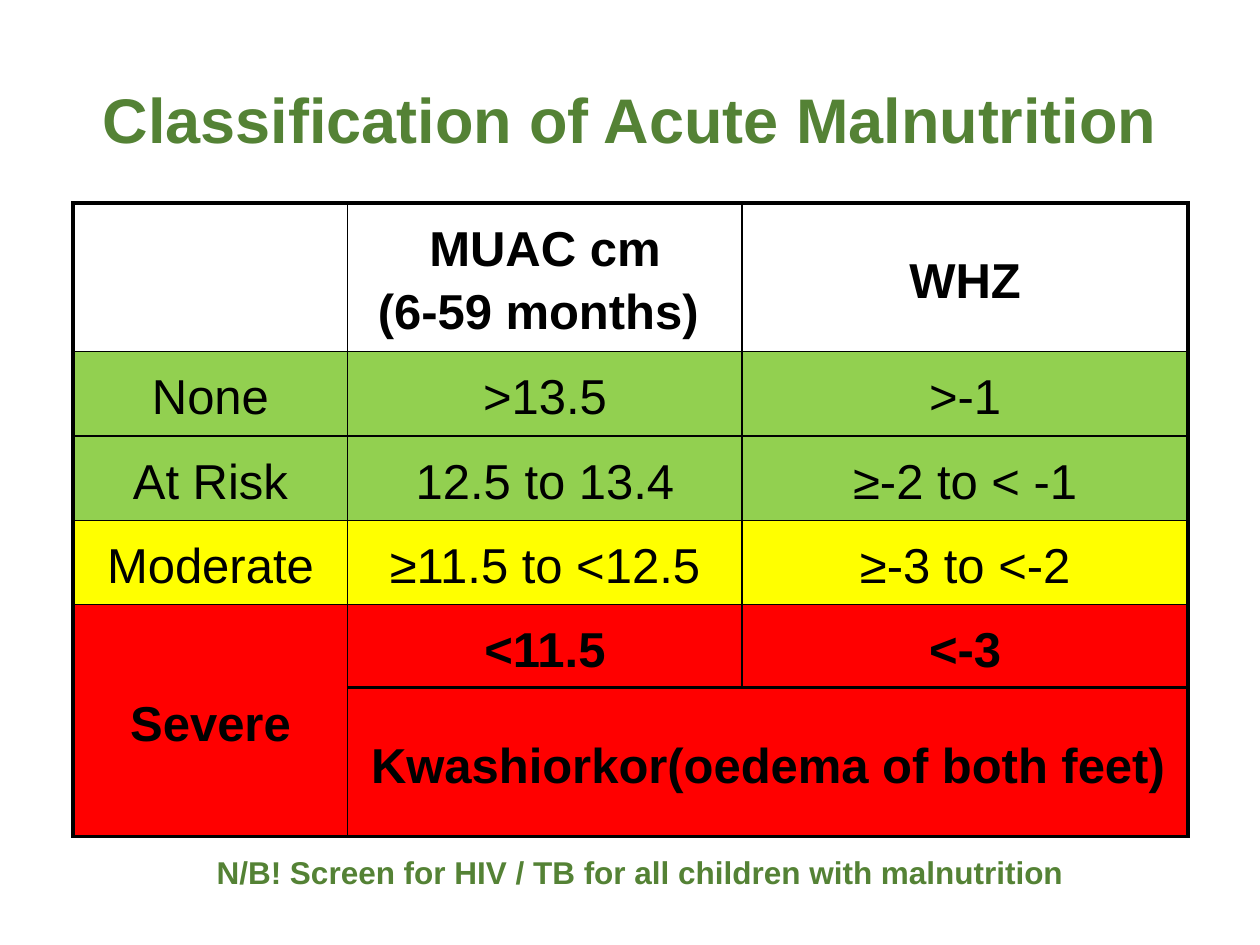
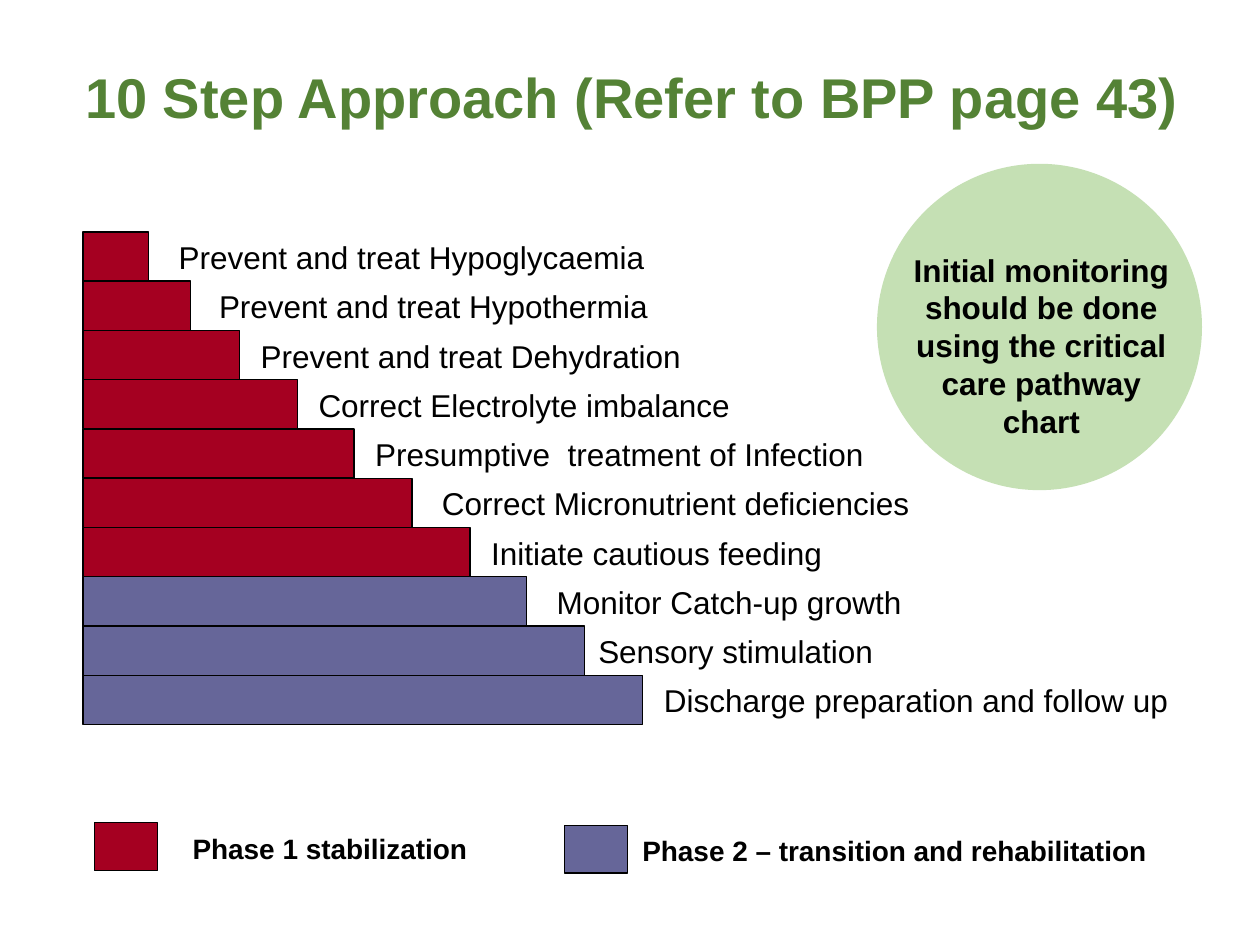
from dataclasses import dataclass

from lxml.etree import SubElement
from pptx import Presentation
from pptx.dml.color import RGBColor
from pptx.enum.shapes import MSO_SHAPE
from pptx.enum.text import MSO_ANCHOR, MSO_AUTO_SIZE, PP_ALIGN
from pptx.oxml.ns import qn
from pptx.util import Inches, Pt

FONT = "Arial"
BLACK = RGBColor(0x00, 0x00, 0x00)
WHITE = RGBColor(0xFF, 0xFF, 0xFF)
TITLE_GREEN = RGBColor(0x54, 0x82, 0x35)
SAFE_GREEN = RGBColor(0x92, 0xD0, 0x50)
MODERATE_YELLOW = RGBColor(0xFF, 0xFF, 0x00)
SEVERE_RED = RGBColor(0xFF, 0x00, 0x00)
STABILIZATION_RED = RGBColor(0xA5, 0x00, 0x21)
REHABILITATION_BLUE = RGBColor(0x66, 0x66, 0x99)
MONITORING_GREEN = RGBColor(0xC5, 0xE0, 0xB4)

TITLE_ONLY = 5
THICK, THIN = Pt(2.25), Pt(1)


@dataclass(frozen=True)
class Box:
    left: float
    top: float
    width: float
    height: float

    def lengths(self) -> tuple:
        return tuple(Inches(n) for n in (self.left, self.top, self.width, self.height))


@dataclass(frozen=True)
class Severity:
    texts: tuple[str, str, str]
    color: RGBColor
    height: float
    bold: bool = False


@dataclass(frozen=True)
class Step:
    name: str
    bar_width: float
    name_left: float
    name_width: float
    color: RGBColor = STABILIZATION_RED


@dataclass(frozen=True)
class Phase:
    name: str
    color: RGBColor
    swatch: Box
    name_box: Box


SEVERITIES = (
    Severity(("", "MUAC cm\n(6-59 months) ", "WHZ"), WHITE, 1.18, True),
    Severity(("None", ">13.5", ">-1"), SAFE_GREEN, 0.67),
    Severity(("At Risk", "12.5 to 13.4", "≥-2 to < -1"), SAFE_GREEN, 0.67),
    Severity(("Moderate", "≥11.5 to <12.5", "≥-3 to <-2"), MODERATE_YELLOW, 0.67),
    Severity(("Severe", "<11.5", "<-3"), SEVERE_RED, 0.66, True),
    Severity(("", "Kwashiorkor(oedema of both feet)", ""), SEVERE_RED, 1.18, True),
)
CRITERIA_WIDTHS = (2.18, 3.13, 3.54)
LAST_ROW, LAST_COLUMN = len(SEVERITIES) - 1, len(CRITERIA_WIDTHS) - 1

STEPS = (
    Step("Prevent and treat Hypoglycaemia", 0.52, 1.32, 4.08),
    Step("Prevent and treat Hypothermia", 0.85, 1.64, 4.27),
    Step("Prevent and treat Dehydration", 1.24, 1.97, 3.94),
    Step("Correct Electrolyte imbalance", 1.7, 2.43, 3.94),
    Step("Presumptive  treatment of Infection", 2.15, 2.88, 5.03),
    Step("Correct Micronutrient deficiencies", 2.61, 3.41, 4.77),
    Step("Initiate cautious feeding", 3.07, 3.8, 4.14),
    Step("Monitor Catch-up growth", 3.52, 4.32, 3.68, REHABILITATION_BLUE),
    Step("Sensory stimulation", 3.98, 4.65, 3.36, REHABILITATION_BLUE),
    Step("Discharge preparation and follow up", 4.44, 5.17, 4.28, REHABILITATION_BLUE),
)
STAIRS_LEFT, STAIRS_TOP, STAIRS_HEIGHT = 0.66, 1.84, 3.91

PHASES = (
    Phase("Phase 1 stabilization", STABILIZATION_RED,
          Box(0.75, 6.53, 0.5, 0.38), Box(1.43, 6.55, 2.62, 0.37)),
    Phase("Phase 2 – transition and rehabilitation", REHABILITATION_BLUE,
          Box(4.48, 6.55, 0.5, 0.38), Box(5, 6.57, 4.26, 0.37)),
)


def format_text(frame, size: float, color: RGBColor = BLACK, bold: bool = False,
                align=PP_ALIGN.LEFT, spacing=None) -> None:
    for paragraph in frame.paragraphs:
        paragraph.alignment = align
        paragraph.line_spacing = spacing
        for run in paragraph.runs:
            run.font.name = FONT
            run.font.size = Pt(size)
            run.font.bold = bold
            run.font.color.rgb = color


def add_titled_slide(deck, text: str, box: Box, size: float):
    slide = deck.slides.add_slide(deck.slide_layouts[TITLE_ONLY])
    title = slide.shapes.title
    title.left, title.top, title.width, title.height = box.lengths()
    frame = title.text_frame
    frame.text = text
    frame.auto_size = MSO_AUTO_SIZE.NONE
    frame.vertical_anchor = MSO_ANCHOR.MIDDLE
    format_text(frame, size, TITLE_GREEN, True, PP_ALIGN.CENTER, 0.9)
    return slide


def add_text(slide, text: str, box: Box, size: float, **style) -> None:
    frame = slide.shapes.add_textbox(*box.lengths()).text_frame
    frame.word_wrap = True
    frame.text = text
    format_text(frame, size, **style)


def add_filled(slide, preset, box: Box, color: RGBColor, line_width: float = 0) -> None:
    shape = slide.shapes.add_shape(preset, *box.lengths())
    shape.shadow.inherit = False
    shape.fill.solid()
    shape.fill.fore_color.rgb = color
    if line_width:
        shape.line.color.rgb = BLACK
        shape.line.width = Pt(line_width)
    else:
        shape.line.fill.background()


def draw_borders(cell, row: int, column: int) -> None:
    oedema = row == LAST_ROW and column > 0
    thick_sides = {
        "a:lnL": column == 0,
        "a:lnR": column == LAST_COLUMN or oedema,
        "a:lnT": row == 0 or oedema,
        "a:lnB": row >= LAST_ROW - 1,
    }
    properties = cell._tc.get_or_add_tcPr()
    for side, thick in thick_sides.items():
        line = SubElement(properties, qn(side), w=str(THICK if thick else THIN))
        fill = SubElement(line, qn("a:solidFill"))
        SubElement(fill, qn("a:srgbClr"), val=str(BLACK))


def add_classification_table(slide) -> None:
    box = Box(0.58, 1.61, sum(CRITERIA_WIDTHS), sum(s.height for s in SEVERITIES))
    table = slide.shapes.add_table(
        len(SEVERITIES), len(CRITERIA_WIDTHS), *box.lengths()).table
    table.first_row = table.horz_banding = False
    for column, width in zip(table.columns, CRITERIA_WIDTHS):
        column.width = Inches(width)
    for row, severity in enumerate(SEVERITIES):
        table.rows[row].height = Inches(severity.height)
        for column, text in enumerate(severity.texts):
            cell = table.cell(row, column)
            draw_borders(cell, row, column)
            cell.fill.solid()
            cell.fill.fore_color.rgb = severity.color
            cell.margin_left = cell.margin_right = Inches(0.07)
            cell.margin_top = cell.margin_bottom = Inches(0.03)
            cell.vertical_anchor = MSO_ANCHOR.MIDDLE
            cell.text_frame.text = text
            format_text(cell.text_frame, 28, bold=severity.bold,
                        align=PP_ALIGN.CENTER, spacing=1.15)
    table.cell(LAST_ROW - 1, 0).merge(table.cell(LAST_ROW, 0))
    table.cell(LAST_ROW, 1).merge(table.cell(LAST_ROW, LAST_COLUMN))


def build_classification(deck) -> None:
    slide = add_titled_slide(deck, "Classification of Acute Malnutrition",
                             Box(0.69, 0.63, 8.62, 0.69), 36)
    add_classification_table(slide)
    add_text(slide, "N/B! Screen for HIV / TB for all children with malnutrition",
             Box(1.47, 6.72, 7.22, 0.4), 18, color=TITLE_GREEN, bold=True,
             align=PP_ALIGN.CENTER)


def build_ten_steps(deck) -> None:
    slide = add_titled_slide(deck, "10 Step Approach (Refer to BPP page 43)",
                             Box(0.49, 0.4, 9.05, 0.8), 32)
    stair_height = STAIRS_HEIGHT / len(STEPS)
    for number, step in enumerate(STEPS):
        top = STAIRS_TOP + number * stair_height
        add_filled(slide, MSO_SHAPE.RECTANGLE,
                   Box(STAIRS_LEFT, top, step.bar_width, stair_height), step.color, 0.75)
        add_text(slide, step.name, Box(step.name_left, top, step.name_width, 0.42), 18)

    add_filled(slide, MSO_SHAPE.OVAL, Box(6.96, 1.3, 2.58, 2.59), MONITORING_GREEN)
    add_text(slide,
             "Initial monitoring should be done using the critical care pathway chart",
             Box(7.08, 1.94, 2.37, 1.62), 18, bold=True,
             align=PP_ALIGN.CENTER, spacing=Pt(21.6))

    for phase in PHASES:
        add_filled(slide, MSO_SHAPE.RECTANGLE, phase.swatch, phase.color, 0.75)
        add_text(slide, phase.name, phase.name_box, 16, bold=True)


def main() -> None:
    deck = Presentation()
    deck.slide_width, deck.slide_height = Inches(10), Inches(7.5)
    build_classification(deck)
    build_ten_steps(deck)
    deck.save("out.pptx")


if __name__ == "__main__":
    main()
